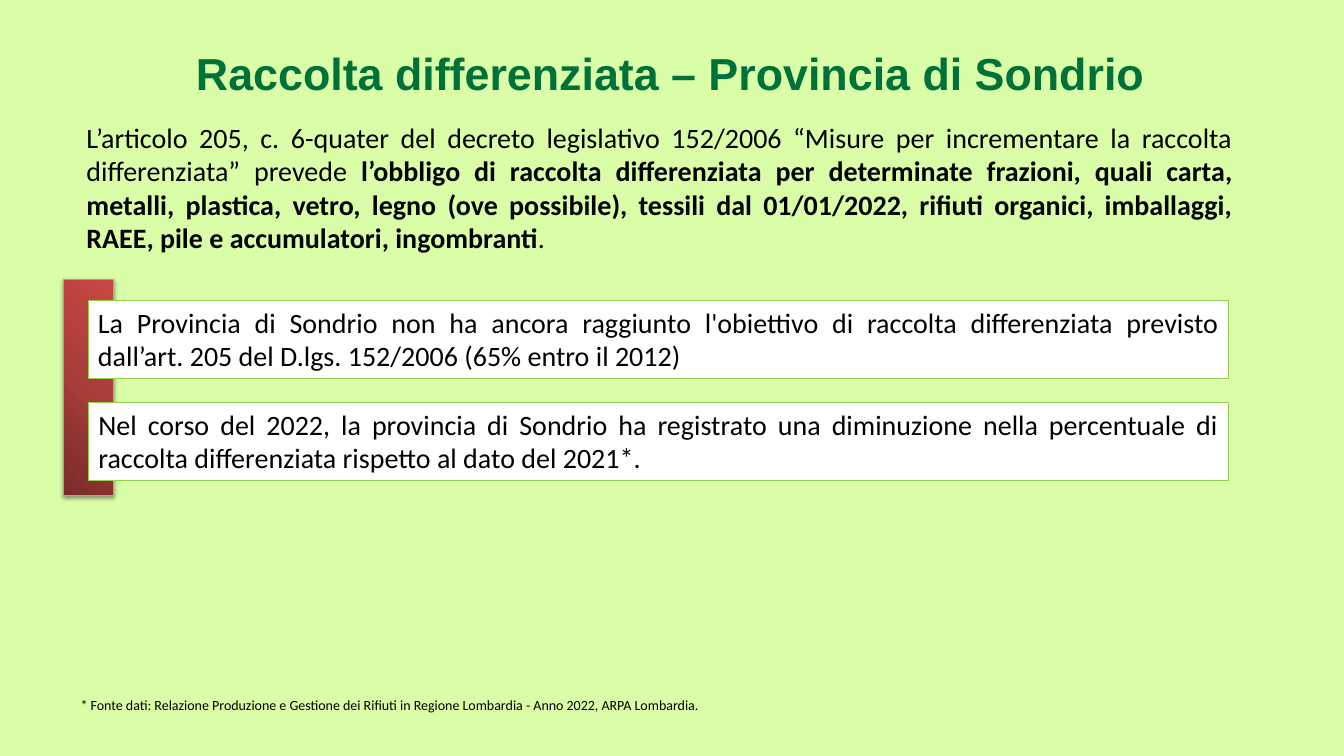
from copy import deepcopy

from pptx import Presentation
from pptx import util as u
from pptx.dml.color import RGBColor
from pptx.enum import shapes, text
from pptx.oxml import parse_xml
from pptx.oxml.ns import nsdecls, qn

BLACK = "000000"
JUSTIFY = text.PP_ALIGN.JUSTIFY


def colour(hex_code):
    return RGBColor.from_string(hex_code)


def write(box, spans, size, align, font="Calibri", ink=BLACK,
          anchor=text.MSO_ANCHOR.TOP):
    """Fill a box with one paragraph of (wording, bold) spans."""
    frame = box.text_frame
    frame.word_wrap = True
    frame.vertical_anchor = anchor
    para = frame.paragraphs[0]
    para.alignment = align
    for wording, bold in spans:
        span = para.add_run()
        span.text = wording
        span.font.name = font
        span.font.size = u.Pt(size)
        span.font.bold = bold
        span.font.color.rgb = colour(ink)


def add_text(page, place, *args, **style):
    box = page.shapes.add_textbox(*map(u.Cm, place))
    write(box, *args, **style)


def add_rectangle(page, place, edge):
    box = page.shapes.add_shape(shapes.MSO_SHAPE.RECTANGLE, *map(u.Cm, place))
    box.shadow.inherit = False
    box.line.color.rgb = colour(edge)
    box.line.width = u.Pt(0.75)
    return box


def add_statement(page, place, wording):
    box = add_rectangle(page, place, "92D050")
    box.fill.solid()
    box.fill.fore_color.rgb = colour("FFFFFF")
    write(box, [(wording, False)], 20, JUSTIFY)


def add_red_bar(page, place):
    bar = add_rectangle(page, place, "98B955")
    bar.fill.gradient()
    bar.fill.gradient_angle = 45
    properties = bar._element.spPr

    # Third gradient stop
    stop_list = properties.find(qn("a:gradFill")).find(qn("a:gsLst"))
    stop_list.append(deepcopy(stop_list[0]))
    shades = [(0, "772B29"), (0.5, "A93D3A"), (1, "C94844")]
    for stop, (position, shade) in zip(bar.fill.gradient_stops, shades):
        stop.position = position
        stop.color.rgb = colour(shade)

    # Soft shadow below
    properties.find(qn("a:effectLst")).append(parse_xml(
        f'<a:outerShdw {nsdecls("a")} blurRad="{u.Pt(3.1)}" dist="{u.Pt(1.6)}" '
        'dir="5400000" rotWithShape="0"><a:srgbClr val="000000">'
        '<a:alpha val="38000"/></a:srgbClr></a:outerShdw>'))


def main():
    deck = Presentation()
    deck.slide_width, deck.slide_height = u.Cm(33.87), u.Cm(19.05)
    page = deck.slides.add_slide(deck.slide_layouts[6])
    page.background.fill.solid()
    page.background.fill.fore_color.rgb = colour("DAFDA7")

    # Red bar behind the statements
    add_red_bar(page, (1.6, 7.04, 1.27, 5.44))

    # Title and legal basis
    add_text(page, (2.49, 0.79, 28.83, 2.08),
             [("Raccolta differenziata – Provincia di Sondrio", True)],
             32, text.PP_ALIGN.CENTER, font="Arial", ink="007239",
             anchor=text.MSO_ANCHOR.MIDDLE)
    add_text(page, (1.93, 2.9, 29.39, 3.68), [
        ("L’articolo 205, c. 6-quater del decreto legislativo 152/2006 “Misure "
         "per incrementare la raccolta differenziata” prevede ", False),
        ("l’obbligo di raccolta differenziata per determinate frazioni, quali "
         "carta, metalli, plastica, vetro, legno (ove possibile), tessili dal "
         "01/01/2022, rifiuti organici, imballaggi, RAEE, pile e accumulatori, "
         "ingombranti", True),
        (".", False)], 20, JUSTIFY)

    # Statements
    add_statement(page, (2.22, 7.57, 28.75, 1.96),
                  "La Provincia di Sondrio non ha ancora raggiunto l'obiettivo di "
                  "raccolta differenziata previsto dall’art. 205 del D.lgs. "
                  "152/2006 (65% entro il 2012)")
    add_statement(page, (2.23, 10.14, 28.73, 1.96),
                  "Nel corso del 2022, la provincia di Sondrio ha registrato una "
                  "diminuzione nella percentuale di raccolta differenziata "
                  "rispetto al dato del 2021*.")

    # Data source
    add_text(page, (1.78, 17.42, 16.51, 0.69),
             [("* Fonte dati: Relazione Produzione e Gestione dei Rifiuti in "
               "Regione Lombardia - Anno 2022, ARPA Lombardia.", False)],
             10, text.PP_ALIGN.LEFT)

    deck.save("out.pptx")


if __name__ == "__main__":
    main()
